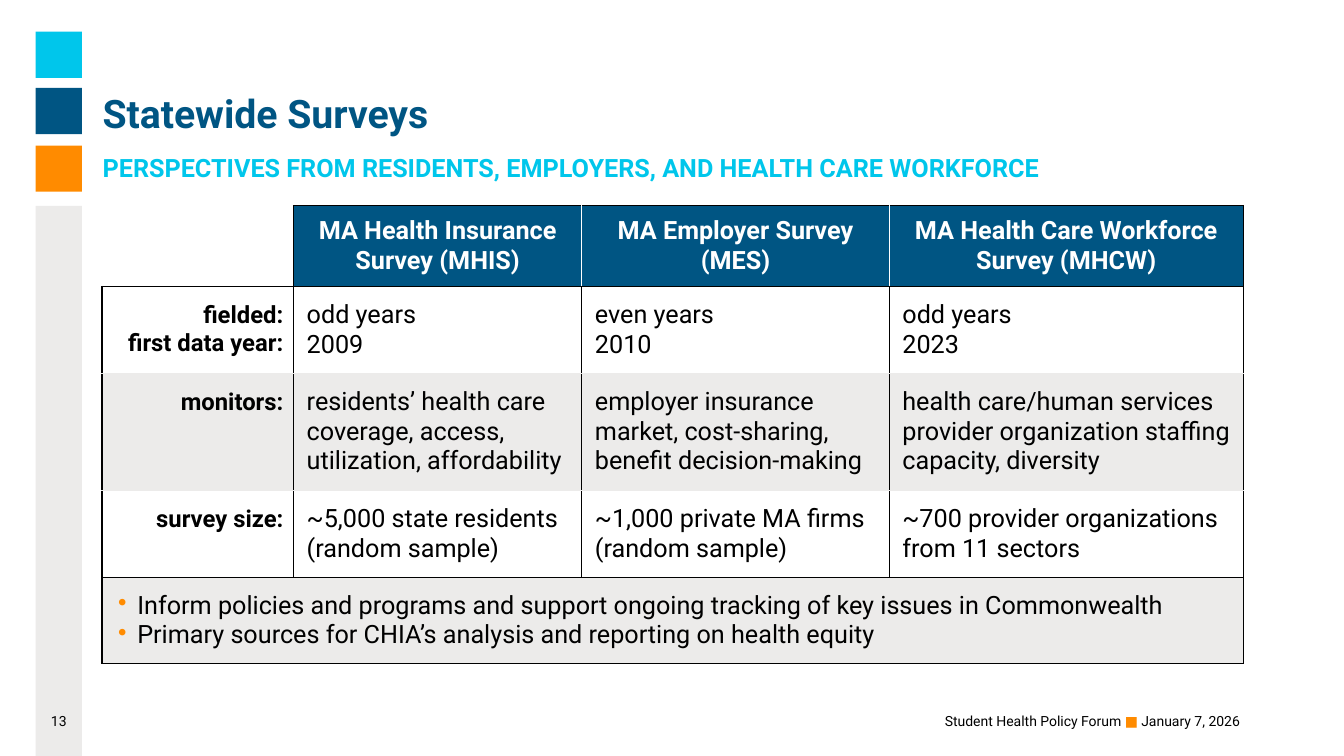
"""Build the Statewide Surveys slide with its survey comparison table."""
from lxml import etree
from pptx import Presentation
from pptx.dml.color import RGBColor
from pptx.enum.shapes import MSO_SHAPE
from pptx.enum.text import MSO_ANCHOR, PP_ALIGN
from pptx.oxml.ns import qn
from pptx.util import Pt

RECTANGLE = MSO_SHAPE.RECTANGLE
TOP, MIDDLE, BOTTOM = MSO_ANCHOR.TOP, MSO_ANCHOR.MIDDLE, MSO_ANCHOR.BOTTOM
LEFT, CENTER, RIGHT = PP_ALIGN.LEFT, PP_ALIGN.CENTER, PP_ALIGN.RIGHT
NAVY = RGBColor(0x00, 0x55, 0x83)
CYAN = RGBColor(0x00, 0xC6, 0xEB)
ORANGE = RGBColor(0xFF, 0x8B, 0x00)
GRAY = RGBColor(0xEC, 0xEB, 0xEA)
BLACK = RGBColor(0, 0, 0)
WHITE = RGBColor(255, 255, 255)
FONT = "Roboto"

TITLE = "Statewide Surveys"
SUBTITLE = "PERSPECTIVES FROM RESIDENTS, EMPLOYERS, AND HEALTH CARE WORKFORCE"
PAGE_NUMBER = "13"
FOOTER = [("Student Health Policy Forum ", BLACK), ("■ ", ORANGE), ("January 7, 2026", BLACK)]
HEADERS = [
    ["MA Health Insurance Survey (MHIS)"],
    ["MA Employer Survey", "(MES)"],
    ["MA Health Care Workforce Survey (MHCW)"],
]
SURVEY_ROWS = [
    ("fielded:\nfirst data year:", "odd years\n2009", "even years\n2010", "odd years\n2023"),
    ("monitors:", "residents’ health care coverage, access, utilization, affordability",
     "employer insurance market, cost-sharing, benefit decision-making",
     "health care/human services provider organization staffing capacity, diversity"),
    ("survey size:", "~5,000 state residents (random sample)",
     "~1,000 private MA firms (random sample)",
     "~700 provider organizations from 11 sectors"),
]
PURPOSES = [
    "Inform policies and programs and support ongoing tracking of key issues in Commonwealth",
    "Primary sources for CHIA’s analysis and reporting on health equity",
]

BAND_LEFT, BAND_WIDTH = 25.5, 33
BAND_BLOCKS = [(22.7, 33, CYAN), (62.8, 33, NAVY), (104, 33, ORANGE), (147, 393, GRAY)]
TEXT_LEFT, TEXT_WIDTH = 66.2, 819.4
TABLE_LEFT, TABLE_TOP = 72.9, 147
COLUMN_WIDTHS = [136.8, 205.9, 219.6, 252.8]
ROW_HEIGHTS = [56.6, 60.8, 82.6, 60.8, 60.8]
ROW_FILLS = [WHITE, GRAY, WHITE]
LABEL_MARGINS = (0, 10.5, 7.2, 7.2)
VALUE_MARGINS = (9.4, 9.4, 9.4, 9.4)
HEADER_MARGINS = (9.4, 7.2, 9.4, 7.2)
PURPOSE_MARGINS = (7.2, 9.4, 7.2, 9.4)


def add_runs(paragraph, runs, size, bold=False):
    """Add (text, color) runs, turning newlines into line breaks."""
    for text, color in runs:
        for index, line in enumerate(text.split("\n")):
            if index:
                paragraph.add_line_break()
            run = paragraph.add_run()
            run.text = line
            run.font.name = FONT
            run.font.size = Pt(size)
            run.font.bold = bold
            run.font.color.rgb = color


def add_text(slide, box, runs, size, bold=False, align=LEFT, anchor=MIDDLE,
             margins=(7.2, 3.6, 0, 3.6), spacing=1.0):
    """Add a one-paragraph text box."""
    frame = slide.shapes.add_textbox(*[Pt(length) for length in box]).text_frame
    frame.word_wrap = True
    frame.vertical_anchor = anchor
    (frame.margin_left, frame.margin_top,
     frame.margin_right, frame.margin_bottom) = [Pt(margin) for margin in margins]
    paragraph = frame.paragraphs[0]
    paragraph.alignment = align
    paragraph.line_spacing = spacing
    add_runs(paragraph, runs, size, bold)


def add_bullet(paragraph):
    """Give a paragraph an orange bullet and a hanging indent."""
    properties = paragraph._p.get_or_add_pPr()
    properties.set("marL", str(Pt(18)))
    properties.set("indent", str(-Pt(13.7)))
    color = etree.SubElement(properties, qn("a:buClr"))
    etree.SubElement(color, qn("a:srgbClr")).set("val", str(ORANGE))
    etree.SubElement(properties, qn("a:buChar")).set("char", "•")


def style_cell(cell, fill, borders):
    """Set left, right, top and bottom border colors, then the fill."""
    properties = cell._tc.get_or_add_tcPr()
    for side, color in zip(("lnL", "lnR", "lnT", "lnB"), borders):
        line = etree.SubElement(properties, qn("a:" + side))
        line.set("w", str(Pt(1)))
        if color is None:
            etree.SubElement(line, qn("a:noFill"))
        else:
            solid = etree.SubElement(line, qn("a:solidFill"))
            etree.SubElement(solid, qn("a:srgbClr")).set("val", str(color))
    if fill is None:
        cell.fill.background()
    else:
        cell.fill.solid()
        cell.fill.fore_color.rgb = fill


def write_cell(cell, texts, margins, size=18, color=BLACK, bold=False,
               align=LEFT, anchor=MIDDLE, bullets=False):
    """Write one paragraph per text into a table cell."""
    (cell.margin_left, cell.margin_top,
     cell.margin_right, cell.margin_bottom) = [Pt(margin) for margin in margins]
    cell.vertical_anchor = anchor
    for index, text in enumerate(texts):
        frame = cell.text_frame
        paragraph = frame.add_paragraph() if index else frame.paragraphs[0]
        paragraph.alignment = align
        if bullets:
            add_bullet(paragraph)
        add_runs(paragraph, [(text, color)], size, bold)


def add_survey_table(slide):
    """Add the table: headers, survey rows and the merged purpose row."""
    table = slide.shapes.add_table(
        len(ROW_HEIGHTS), len(COLUMN_WIDTHS), Pt(TABLE_LEFT), Pt(TABLE_TOP),
        Pt(sum(COLUMN_WIDTHS)), Pt(sum(ROW_HEIGHTS))).table
    table.first_row = table.horz_banding = False
    for column, width in zip(table.columns, COLUMN_WIDTHS):
        column.width = Pt(width)
    for row, height in zip(table.rows, ROW_HEIGHTS):
        row.height = Pt(height)

    style_cell(table.cell(0, 0), None, (None, BLACK, None, BLACK))
    last = len(HEADERS)
    for column, texts in enumerate(HEADERS, 1):
        cell = table.cell(0, column)
        style_cell(cell, NAVY, (BLACK if column == 1 else WHITE,
                                BLACK if column == last else WHITE, BLACK, BLACK))
        write_cell(cell, texts, HEADER_MARGINS, color=WHITE, bold=True, align=CENTER)

    for row, (texts, fill) in enumerate(zip(SURVEY_ROWS, ROW_FILLS), 1):
        top = BLACK if row == 1 else GRAY
        bottom = BLACK if row == len(SURVEY_ROWS) else GRAY
        for column, text in enumerate(texts):
            cell = table.cell(row, column)
            style_cell(cell, fill, (BLACK, BLACK, top, bottom))
            if column:
                write_cell(cell, [text], VALUE_MARGINS)
            else:
                write_cell(cell, [text], LABEL_MARGINS, size=17, bold=True,
                           align=RIGHT, anchor=TOP)

    purpose_row = len(ROW_HEIGHTS) - 1
    for column in range(len(COLUMN_WIDTHS)):
        style_cell(table.cell(purpose_row, column), GRAY, (BLACK,) * 4)
    purpose_cell = table.cell(purpose_row, 0)
    purpose_cell.merge(table.cell(purpose_row, last))
    write_cell(purpose_cell, PURPOSES, PURPOSE_MARGINS, bullets=True)


def main():
    """Build and save the slide."""
    presentation = Presentation()
    presentation.slide_width, presentation.slide_height = Pt(960), Pt(540)
    slide = presentation.slides.add_slide(presentation.slide_layouts[6])
    for top, height, color in BAND_BLOCKS:
        block = slide.shapes.add_shape(
            RECTANGLE, Pt(BAND_LEFT), Pt(top), Pt(BAND_WIDTH), Pt(height))
        block.shadow.inherit = False
        block.fill.solid()
        block.fill.fore_color.rgb = color
        block.line.fill.background()
    add_text(slide, (TEXT_LEFT, 24.5, TEXT_WIDTH, 73.4), [(TITLE, NAVY)], 28, bold=True,
             anchor=BOTTOM, margins=(7.2, 3.6, 0, 0), spacing=0.9)
    add_text(slide, (TEXT_LEFT, 104.4, TEXT_WIDTH, 33), [(SUBTITLE, CYAN)], 18, bold=True,
             spacing=0.9)
    add_survey_table(slide)
    add_text(slide, (TEXT_LEFT, 500.4, TEXT_WIDTH, 28.8), FOOTER, 10, align=RIGHT)
    add_text(slide, (BAND_LEFT, 505.4, BAND_WIDTH, 19.4), [(PAGE_NUMBER, BLACK)], 10,
             align=CENTER, margins=(0, 3.6, 0, 3.6))
    presentation.save("out.pptx")


if __name__ == "__main__":
    main()
